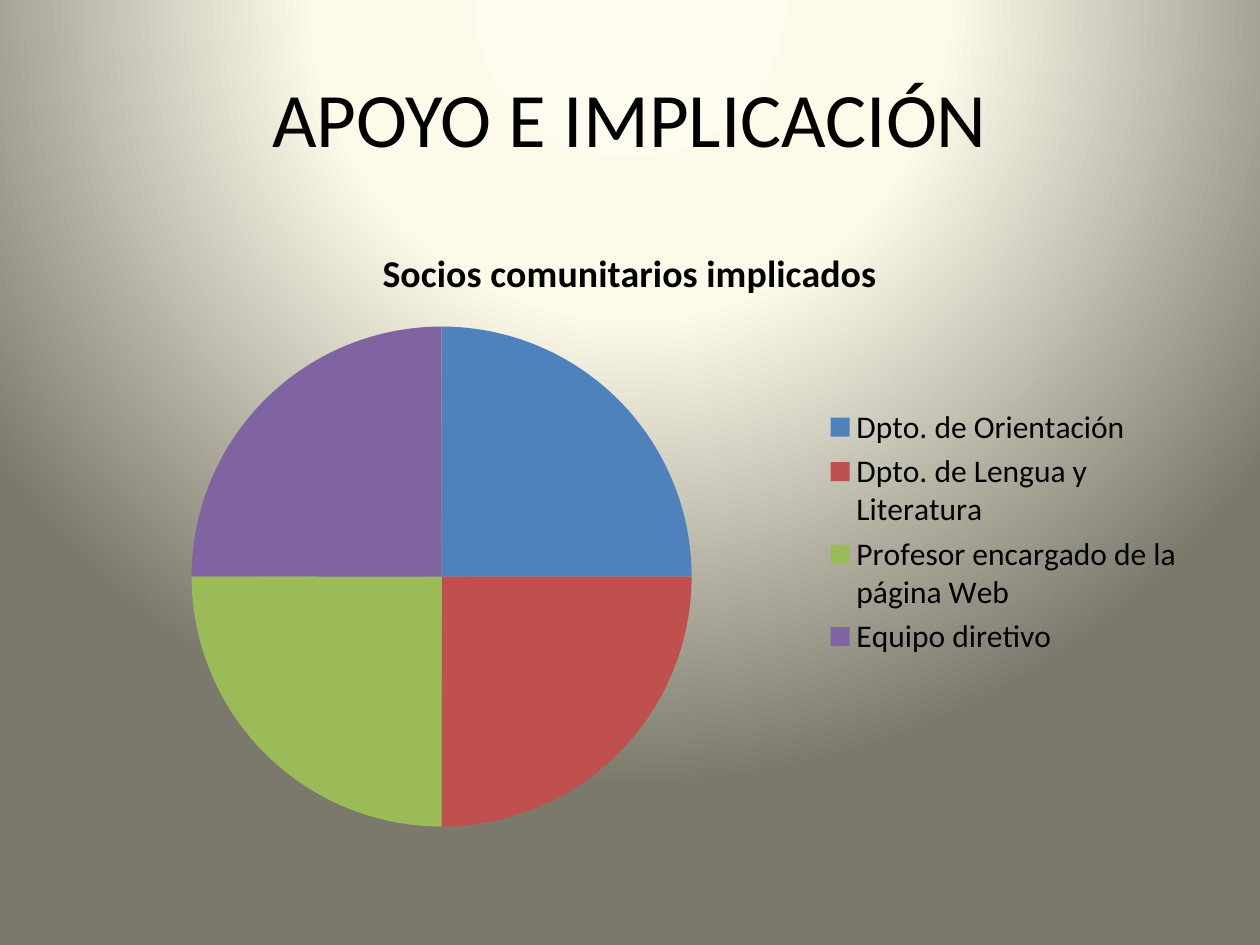
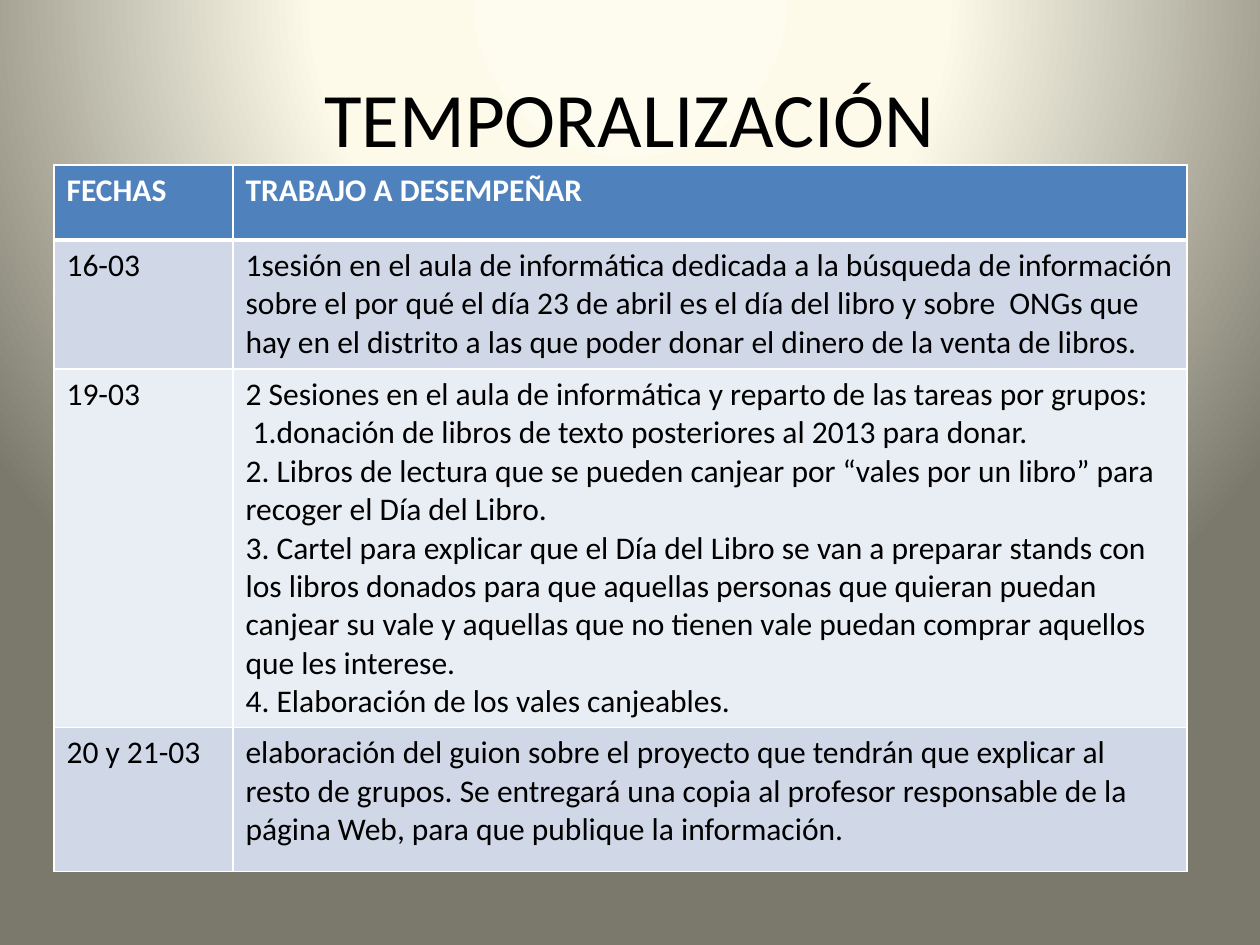
"""Build two slides: a pie of the partners involved and a timetable of the work."""
from pptx import Presentation, util as u
from pptx.chart.data import CategoryChartData
from pptx.dml.color import RGBColor
from pptx.enum import chart as ch, text
from pptx.oxml import parse_xml
from pptx.oxml.ns import nsdecls

FONT = "Calibri"
BLACK, WHITE, BLUE = "000000", "FFFFFF", "4F81BD"
BANDS = ["D0D8E8", "E9EDF4"]
BACKGROUND = [(0, "FEFCEE"), (40, "FDFAEA"), (100, "7B796B")]
TITLE_BOX = (63, 38, 1134, 158)

PARTNERS_TITLE = "APOYO E IMPLICACIÓN"
CHART_TITLE = "Socios comunitarios implicados"
CHART_BOX = (63, 220, 1134, 624)
PARTNERS = [
    ("Dpto. de Orientación", 25, BLUE),
    ("Dpto. de Lengua y Literatura", 25, "C0504D"),
    ("Profesor encargado de la página Web", 25, "9BBB59"),
    ("Equipo diretivo", 25, "8064A2"),
]

SCHEDULE_TITLE = "TEMPORALIZACIÓN"
TABLE_AT = (54, 165)
COL_WIDTHS = [179, 954]
ROW_HEIGHTS = [75, 129, 358, 144]
SCHEDULE = [
    ("FECHAS", ["TRABAJO A DESEMPEÑAR"]),
    ("16-03", [
        "1sesión en el aula de informática dedicada a la búsqueda de información "
        "sobre el por qué el día 23 de abril es el día del libro y sobre  ONGs que "
        "hay en el distrito a las que poder donar el dinero de la venta de libros.",
    ]),
    ("19-03", [
        "2 Sesiones en el aula de informática y reparto de las tareas por grupos:",
        " 1.donación de libros de texto posteriores al 2013 para donar.",
        "2. Libros de lectura que se pueden canjear por “vales por un libro” para "
        "recoger el Día del Libro.",
        "3. Cartel para explicar que el Día del Libro se van a preparar stands con "
        "los libros donados para que aquellas personas que quieran puedan "
        "canjear su vale y aquellas que no tienen vale puedan comprar aquellos "
        "que les interese.",
        "4. Elaboración de los vales canjeables.",
    ]),
    ("20 y 21-03", [
        "elaboración del guion sobre el proyecto que tendrán que explicar al "
        "resto de grupos. Se entregará una copia al profesor responsable de la "
        "página Web, para que publique la información.",
    ]),
]


def px(n):
    return u.Emu(round(n * 914400 / 126))


def rgb(value):
    return RGBColor.from_string(value)


def style(font, size, color=BLACK, bold=False):
    font.name, font.size, font.bold = FONT, u.Pt(size), bold
    font.color.rgb = rgb(color)


def set_background(master):
    master.background.fill.gradient()
    grad = master.element.xpath("p:cSld/p:bg/p:bgPr/a:gradFill")[0]
    stops = "".join(f'<a:gs pos="{pos * 1000}"><a:srgbClr val="{color}"/></a:gs>'
                    for pos, color in BACKGROUND)
    grad.getparent().replace(grad, parse_xml(
        f'<a:gradFill {nsdecls("a")} rotWithShape="1"><a:gsLst>{stops}</a:gsLst>'
        '<a:path path="circle"><a:fillToRect l="50000" t="-80000" r="50000" b="180000"/>'
        '</a:path></a:gradFill>'))


def add_slide(prs, title):
    s = prs.slides.add_slide(prs.slide_layouts[5])
    sp = s.shapes.title
    sp.left, sp.top, sp.width, sp.height = map(px, TITLE_BOX)
    tf = sp.text_frame
    tf.text = title
    tf.vertical_anchor = text.MSO_ANCHOR.MIDDLE
    p = tf.paragraphs[0]
    p.alignment = text.PP_ALIGN.CENTER
    style(p.runs[0].font, 44)
    return s


def add_partners_chart(s):
    names, values, colors = zip(*PARTNERS)
    data = CategoryChartData()
    data.categories = names
    data.add_series(CHART_TITLE, values)
    chart = s.shapes.add_chart(ch.XL_CHART_TYPE.PIE, *map(px, CHART_BOX), data).chart
    style(chart.font, 18)
    chart.has_title = True
    tf = chart.chart_title.text_frame
    tf.text = CHART_TITLE
    style(tf.paragraphs[0].runs[0].font, 21.6, bold=True)
    chart.has_legend = True
    chart.legend.position = ch.XL_LEGEND_POSITION.RIGHT
    chart.legend.include_in_layout = False
    plot = chart.plots[0]
    plot.vary_by_categories = True
    for i, color in enumerate(colors):
        fill = plot.series[0].points[i].format.fill
        fill.solid()
        fill.fore_color.rgb = rgb(color)


def set_borders(cell, top, bottom):
    tc_pr = cell._tc.get_or_add_tcPr()
    for side, width in (("L", 1), ("R", 1), ("T", top), ("B", bottom)):
        tc_pr.append(parse_xml(
            f'<a:ln{side} {nsdecls("a")} w="{u.Pt(width)}"><a:solidFill>'
            f'<a:srgbClr val="{WHITE}"/></a:solidFill></a:ln{side}>'))


def fill_cell(cell, lines, row):
    header = row == 0
    set_borders(cell, 3 if row == 1 else 1, 3 if header else 1)
    cell.fill.solid()
    cell.fill.fore_color.rgb = rgb(BLUE if header else BANDS[(row - 1) % 2])
    cell.text_frame.text = "\n".join(lines)
    for p in cell.text_frame.paragraphs:
        for r in p.runs:
            style(r.font, 18, WHITE if header else BLACK, header)


def add_schedule_table(s):
    size = sum(COL_WIDTHS), sum(ROW_HEIGHTS)
    table = s.shapes.add_table(len(SCHEDULE), len(COL_WIDTHS),
                               *map(px, TABLE_AT + size)).table
    for col, width in zip(table.columns, COL_WIDTHS):
        col.width = px(width)
    for row, (date, tasks) in enumerate(SCHEDULE):
        table.rows[row].height = px(ROW_HEIGHTS[row])
        for col, lines in enumerate(([date], tasks)):
            fill_cell(table.cell(row, col), lines, row)


def main():
    prs = Presentation()
    prs.slide_width, prs.slide_height = px(1260), px(945)
    set_background(prs.slide_master)
    add_partners_chart(add_slide(prs, PARTNERS_TITLE))
    add_schedule_table(add_slide(prs, SCHEDULE_TITLE))
    prs.save("out.pptx")


if __name__ == "__main__":
    main()
